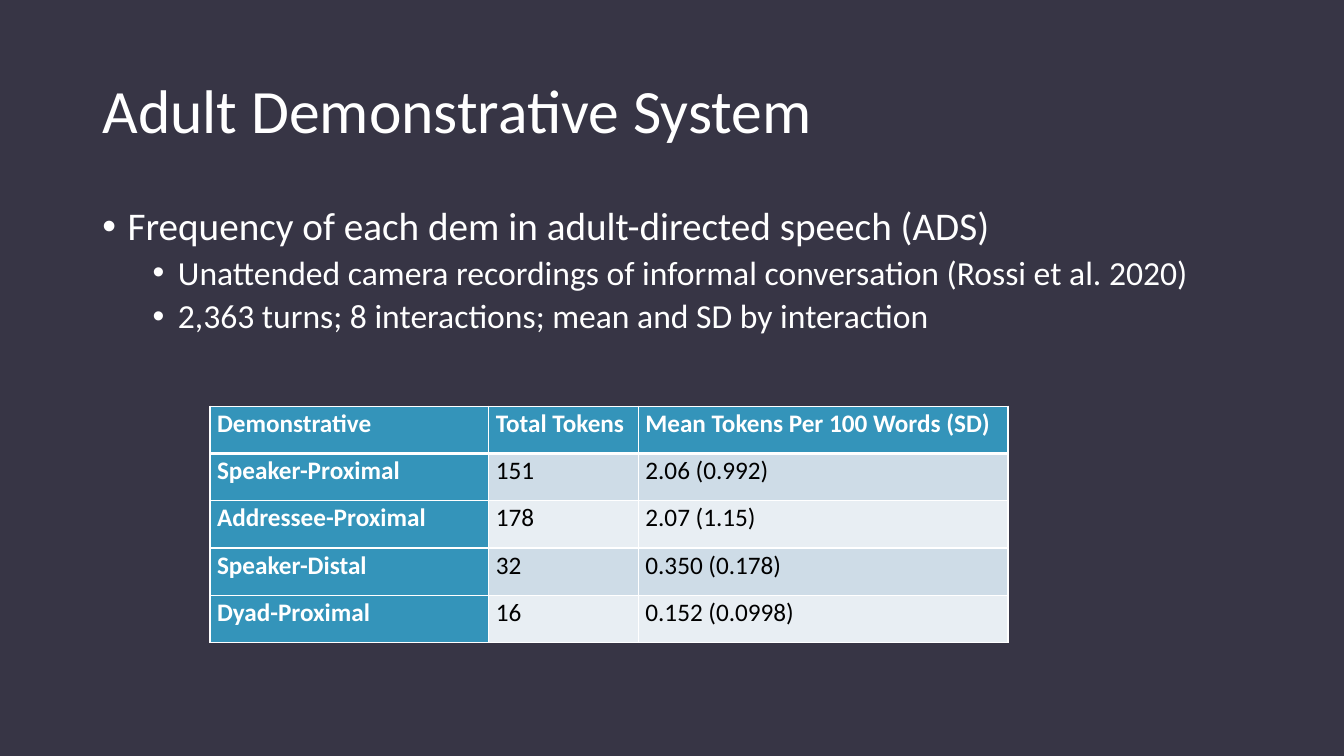
from lxml.etree import SubElement
from pptx import Presentation
from pptx.dml.color import RGBColor
from pptx.enum.text import MSO_ANCHOR, PP_ALIGN
from pptx.oxml import parse_xml
from pptx.oxml.ns import nsdecls, qn
from pptx.util import Inches, Pt

SLIDE_WIDTH, SLIDE_HEIGHT = 13.33, 7.5
GRID = 16
FONT = "Calibri"
WHITE, BLACK = "FFFFFF", "000000"
BACKGROUND, ACCENT = "373545", "3494BA"
BANDS = ("CEDCE7", "E8EEF3")

TITLE = "Adult Demonstrative System"
POINTS = [
    (0, "Frequency of each dem in adult-directed speech (ADS)"),
    (1, "Unattended camera recordings of informal conversation (Rossi et al. 2020)"),
    (1, "2,363 turns; 8 interactions; mean and SD by interaction"),
]
FREQUENCIES = [
    ("Demonstrative", "Total Tokens", "Mean Tokens Per 100 Words (SD)"),
    ("Speaker-Proximal", "151", "2.06 (0.992)"),
    ("Addressee-Proximal", "178", "2.07 (1.15)"),
    ("Speaker-Distal", "32", "0.350 (0.178)"),
    ("Dyad-Proximal", "16", "0.152 (0.0998)"),
]
COLUMN_SPANS = (3.32, 1.78, 4.4)


def columns(count):
    """Return the width of a number of grid columns."""
    return Inches(SLIDE_WIDTH * count / GRID)


def rows(count):
    """Return the height of a number of grid rows."""
    return Inches(SLIDE_HEIGHT * count / GRID)


def paint(color_format, color):
    """Give a colour format or a fill a hex colour."""
    color_format.rgb = RGBColor.from_string(color)


def fill_solid(fill, color):
    """Fill an area with one hex colour."""
    fill.solid()
    paint(fill.fore_color, color)


def write(paragraph, text, size=18, color=WHITE, bold=False, spacing=0.9, before=0):
    """Put formatted text into a paragraph."""
    paragraph.alignment = PP_ALIGN.LEFT
    paragraph.line_spacing = spacing
    paragraph.space_before = Pt(before)
    run = paragraph.add_run()
    run.text = text
    run.font.name = FONT
    run.font.size = Pt(size)
    run.font.bold = bold
    paint(run.font.color, color)


def add_bullet(paragraph, level):
    """Indent a paragraph by its level and hang a bullet before it."""
    paragraph.level = level
    properties = paragraph._p.get_or_add_pPr()
    properties.set("marL", str(Inches(0.25 + 0.5 * level)))
    properties.set("indent", str(Inches(-0.25)))
    SubElement(properties, qn("a:buFont"), typeface="Arial")
    SubElement(properties, qn("a:buChar"), char="•")


def add_title(slide):
    """Place and format the title placeholder."""
    title = slide.shapes.title
    title.left, title.top = columns(1.1), rows(0.85)
    title.width, title.height = columns(13.8), rows(3.1)
    title.text_frame.vertical_anchor = MSO_ANCHOR.MIDDLE
    write(title.text_frame.paragraphs[0], TITLE, size=44)


def add_points(slide):
    """Add the bulleted points under the title."""
    body = slide.shapes.add_textbox(columns(1.1), rows(4.27), columns(13.8), rows(10.15))
    frame = body.text_frame
    frame.word_wrap = True
    for index, (level, text) in enumerate(POINTS):
        paragraph = frame.add_paragraph() if index else frame.paragraphs[0]
        write(paragraph, text, size=28 - 4 * level, before=10 - 5 * level)
        add_bullet(paragraph, level)


def set_borders(cell, **widths):
    """Draw white cell borders with the given widths in points."""
    properties = cell._tc.get_or_add_tcPr()
    for position, (side, width) in enumerate(widths.items()):
        border = parse_xml(
            f'<a:ln{side} {nsdecls("a")} w="{Pt(width)}"><a:solidFill>'
            f'<a:srgbClr val="{WHITE}"/></a:solidFill></a:ln{side}>'
        )
        properties.insert(position, border)


def format_cell(cell, text, row, column):
    """Write one cell with the style of its row and column."""
    heading = row == 0 or column == 0
    cell.margin_left = cell.margin_right = Inches(0.07)
    cell.margin_top = cell.margin_bottom = 0
    fill_solid(cell.fill, ACCENT if heading else BANDS[(row - 1) % 2])
    set_borders(cell, L=1, R=1, T=3 if row == 1 else 1, B=3 if row == 0 else 1)
    write(cell.text_frame.paragraphs[0], text, color=WHITE if heading else BLACK,
          bold=heading, spacing=1.07)


def add_frequencies(slide):
    """Add the table of demonstrative frequencies."""
    table = slide.shapes.add_table(
        len(FREQUENCIES), len(COLUMN_SPANS), columns(2.5), rows(8.6),
        columns(sum(COLUMN_SPANS)), rows(len(FREQUENCIES)),
    ).table
    for column, span in zip(table.columns, COLUMN_SPANS):
        column.width = columns(span)
    for row, record in enumerate(FREQUENCIES):
        table.rows[row].height = rows(1)
        for column, text in enumerate(record):
            format_cell(table.cell(row, column), text, row, column)


def main():
    """Build the slide and save it."""
    presentation = Presentation()
    presentation.slide_width = Inches(SLIDE_WIDTH)
    presentation.slide_height = Inches(SLIDE_HEIGHT)
    slide = presentation.slides.add_slide(presentation.slide_layouts.get_by_name("Title Only"))
    fill_solid(slide.background.fill, BACKGROUND)
    add_title(slide)
    add_points(slide)
    add_frequencies(slide)
    presentation.save("out.pptx")


if __name__ == "__main__":
    main()
